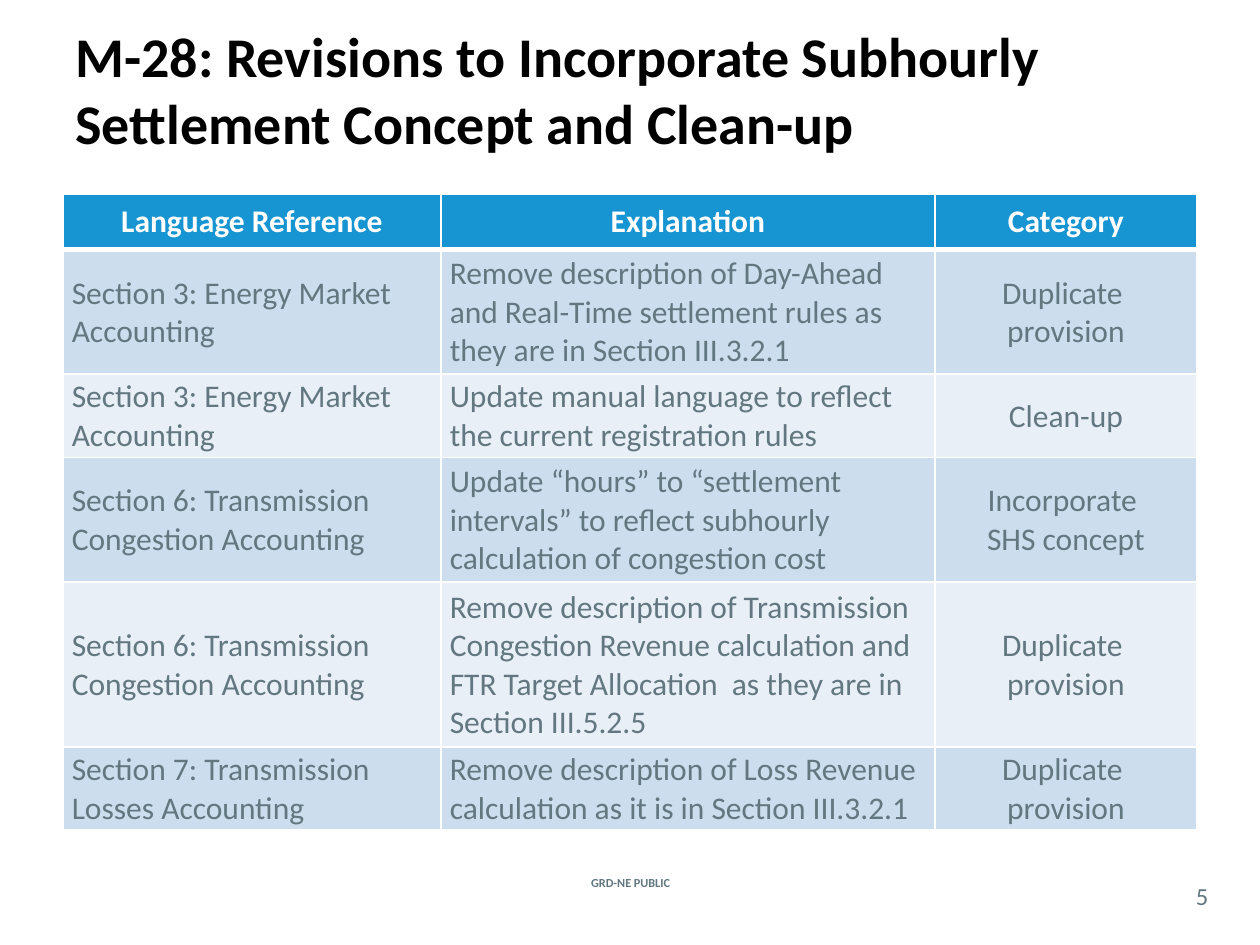
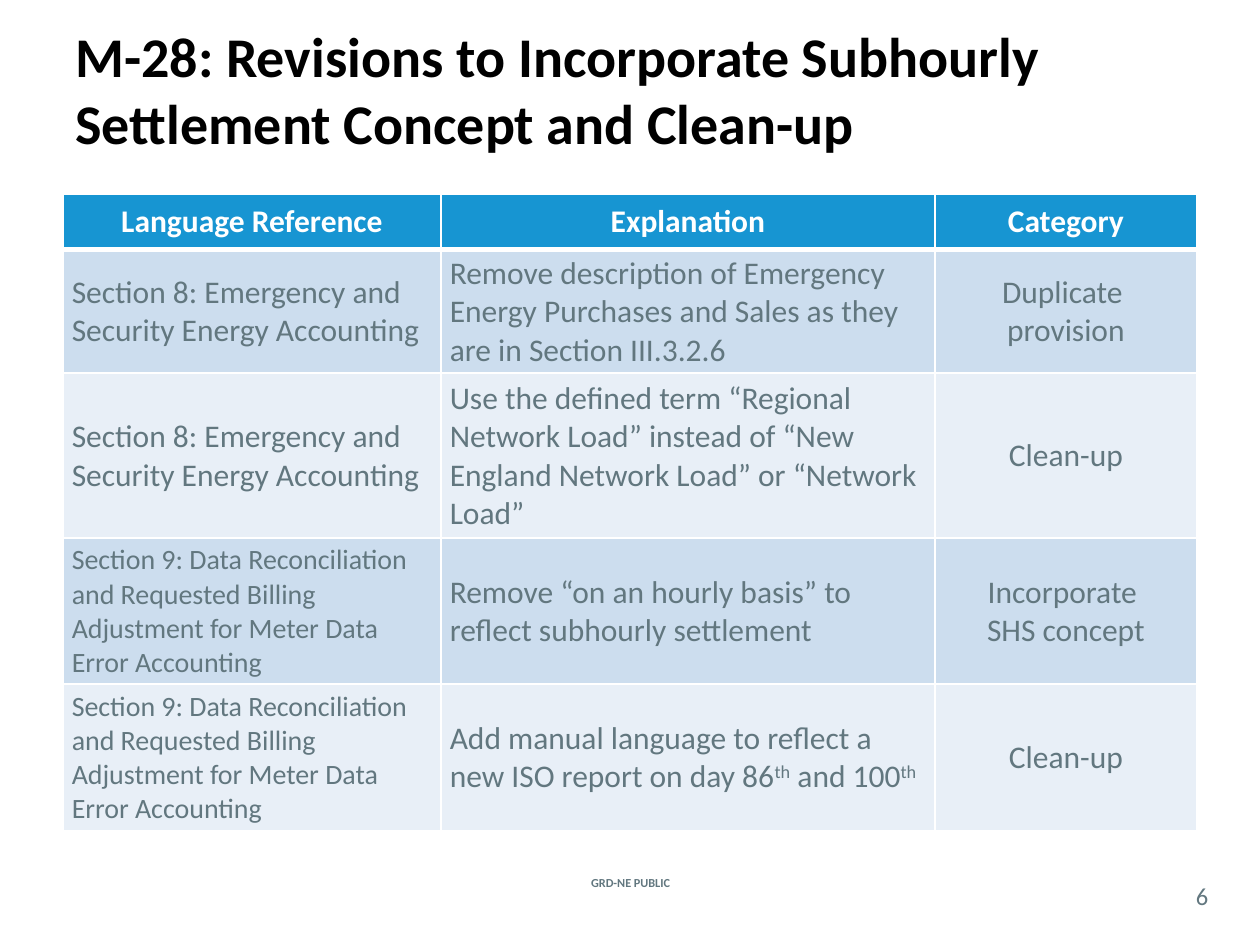
from dataclasses import dataclass

from lxml.etree import SubElement
from pptx import Presentation
from pptx.dml.color import RGBColor as Rgb
from pptx.enum.text import MSO_ANCHOR as Anchor, PP_ALIGN as Align
from pptx.oxml.ns import qn
from pptx.util import Pt

EMU_PER_PX = 9144  # 100 px to the inch


def px(length: int) -> int:
    return length * EMU_PER_PX


@dataclass(frozen=True)
class Theme:
    font: str = "Calibri"
    white: str = "FFFFFF"
    black: str = "000000"
    slate: str = "62777F"
    header_blue: str = "1795D2"
    bands: tuple[str, str] = ("CCDDEE", "E8EFF7")
    title_size: int = 32
    body_size: int = 18
    small_size: int = 16
    number_size: int = 14
    footer_size: int = 7
    rule: int = 1
    header_rule: int = 3


THEME = Theme()


@dataclass(frozen=True)
class TextStyle:
    size: int
    color: str = THEME.slate
    bold: bool = False
    align: Align = Align.LEFT
    indent: int = 0


@dataclass(frozen=True)
class Box:
    left: int
    top: int
    width: int
    height: int


@dataclass(frozen=True)
class Revision:
    reference: str
    explanation: str
    category: str
    height: int
    reference_size: int = THEME.body_size


@dataclass(frozen=True)
class RevisionPage:
    number: int
    revisions: tuple[Revision, ...]


TITLE = "M-28: Revisions to Incorporate Subhourly Settlement Concept and Clean-up"
FOOTER = "GRD-NE PUBLIC"
HEADINGS = ("Language Reference", "Explanation", "Category")

TITLE_BOX = Box(50, 8, 900, 125)
FOOTER_BOX = Box(427, 692, 147, 17)
NUMBER_BOX = Box(933, 696, 42, 29)
TABLE_BOX = Box(50, 154, 900, 505)
COLUMN_WIDTHS = (300, 392, 208)
HEADER_HEIGHT = 44

TITLE_STYLE = TextStyle(THEME.title_size, THEME.black, bold=True)
FOOTER_STYLE = TextStyle(THEME.footer_size, bold=True, align=Align.CENTER)
NUMBER_STYLE = TextStyle(THEME.number_size, align=Align.CENTER)
HEADING_STYLE = TextStyle(THEME.body_size, THEME.white, True, Align.CENTER)
EXPLANATION_STYLE = TextStyle(THEME.body_size, indent=6)
CATEGORY_STYLE = TextStyle(THEME.body_size, align=Align.CENTER)

ENERGY = "Section 3: Energy Market Accounting"
CONGESTION = "Section 6: Transmission Congestion Accounting"
LOSSES = "Section 7: Transmission Losses Accounting"
EMERGENCY = "Section 8: Emergency and Security Energy Accounting"
RECONCILIATION = (
    "Section 9: Data Reconciliation and Requested Billing "
    "Adjustment for Meter Data Error Accounting"
)
DUPLICATE = "Duplicate \nprovision"
SUBHOURLY = "Incorporate \nSHS concept"
CLEAN_UP = "Clean-up"

PAGES = (
    RevisionPage(5, (
        Revision(
            ENERGY,
            "Remove description of Day-Ahead and Real-Time settlement rules "
            "as they are in Section III.3.2.1",
            DUPLICATE, 99),
        Revision(
            ENERGY,
            "Update manual language to reflect the current registration rules",
            CLEAN_UP, 66),
        Revision(
            CONGESTION,
            "Update “hours” to “settlement intervals” to reflect subhourly "
            "calculation of congestion cost",
            SUBHOURLY, 99),
        Revision(
            CONGESTION,
            "Remove description of Transmission Congestion Revenue calculation "
            "and FTR Target Allocation  as they are in Section III.5.2.5",
            DUPLICATE, 131),
        Revision(
            LOSSES,
            "Remove description of Loss Revenue calculation as it is in "
            "Section III.3.2.1",
            DUPLICATE, 66),
    )),
    RevisionPage(6, (
        Revision(
            EMERGENCY,
            "Remove description of Emergency Energy Purchases and Sales as "
            "they are in Section III.3.2.6",
            DUPLICATE, 98),
        Revision(
            EMERGENCY,
            "Use the defined term “Regional Network Load” instead of “New "
            "England Network Load” or “Network Load”",
            CLEAN_UP, 131),
        Revision(
            RECONCILIATION,
            "Remove “on an hourly basis” to reflect subhourly settlement",
            SUBHOURLY, 116, THEME.small_size),
        Revision(
            RECONCILIATION,
            "Add manual language to reflect a new ISO report on day "
            "86^th^ and 100^th^",
            CLEAN_UP, 116, THEME.small_size),
    )),
)


def write(frame, text: str, style: TextStyle) -> None:
    """Write one paragraph per line; text between ^ marks is superscript."""
    for index, line in enumerate(text.split("\n")):
        paragraph = frame.add_paragraph() if index else frame.paragraphs[0]
        paragraph.alignment = style.align
        if style.indent:
            properties = paragraph._p.get_or_add_pPr()
            properties.set("marL", str(px(style.indent)))
            properties.set("indent", "0")
        font = paragraph.font
        font.name = THEME.font
        font.size = Pt(style.size)
        font.bold = style.bold
        font.color.rgb = Rgb.from_string(style.color)
        for part, words in enumerate(line.split("^")):
            if words:
                run = paragraph.add_run()
                run.text = words
                if part % 2:
                    run._r.get_or_add_rPr().set("baseline", "30000")


def add_text(slide, box: Box, text: str, style: TextStyle, inset: bool = True) -> None:
    frame = slide.shapes.add_textbox(
        px(box.left), px(box.top), px(box.width), px(box.height)).text_frame
    frame.word_wrap = True
    frame.vertical_anchor = Anchor.MIDDLE
    if not inset:
        frame.margin_left = frame.margin_top = 0
        frame.margin_right = frame.margin_bottom = 0
    write(frame, text, style)


def add_borders(cell, top: int, bottom: int) -> None:
    """Draw white cell borders; must run before the cell is filled."""
    widths = {"L": THEME.rule, "R": THEME.rule, "T": top, "B": bottom}
    for side, width in widths.items():
        line = SubElement(cell._tc.get_or_add_tcPr(), qn(f"a:ln{side}"), w=str(Pt(width)))
        fill = SubElement(line, qn("a:solidFill"))
        SubElement(fill, qn("a:srgbClr"), val=THEME.white)


def fill_cell(cell, text: str, style: TextStyle, color: str) -> None:
    cell.vertical_anchor = Anchor.MIDDLE
    cell.fill.solid()
    cell.fill.fore_color.rgb = Rgb.from_string(color)
    write(cell.text_frame, text, style)


def add_revision_table(slide, revisions: tuple[Revision, ...]) -> None:
    box = TABLE_BOX
    table = slide.shapes.add_table(
        len(revisions) + 1, len(HEADINGS),
        px(box.left), px(box.top), px(box.width), px(box.height)).table
    for column, width in zip(table.columns, COLUMN_WIDTHS):
        column.width = px(width)
    heights = [HEADER_HEIGHT, *(revision.height for revision in revisions)]
    for row, height in zip(table.rows, heights):
        row.height = px(height)

    for column, heading in enumerate(HEADINGS):
        cell = table.cell(0, column)
        add_borders(cell, THEME.rule, THEME.header_rule)
        fill_cell(cell, heading, HEADING_STYLE, THEME.header_blue)

    for row, revision in enumerate(revisions, start=1):
        entries = (
            (revision.reference, TextStyle(revision.reference_size, indent=6)),
            (revision.explanation, EXPLANATION_STYLE),
            (revision.category, CATEGORY_STYLE),
        )
        for column, (text, style) in enumerate(entries):
            cell = table.cell(row, column)
            cell.margin_left = cell.margin_top = cell.margin_right = px(1)
            cell.margin_bottom = 0
            add_borders(cell, THEME.header_rule if row == 1 else THEME.rule, THEME.rule)
            fill_cell(cell, text, style, THEME.bands[(row - 1) % 2])


def add_page(deck, page: RevisionPage) -> None:
    slide = deck.slides.add_slide(deck.slide_layouts[6])
    slide.background.fill.solid()
    slide.background.fill.fore_color.rgb = Rgb.from_string(THEME.white)
    add_text(slide, FOOTER_BOX, FOOTER, FOOTER_STYLE)
    add_revision_table(slide, page.revisions)
    add_text(slide, NUMBER_BOX, str(page.number), NUMBER_STYLE, inset=False)
    add_text(slide, TITLE_BOX, TITLE, TITLE_STYLE)


def main() -> None:
    deck = Presentation()
    deck.slide_width, deck.slide_height = px(1000), px(750)
    for page in PAGES:
        add_page(deck, page)
    deck.save("out.pptx")


if __name__ == "__main__":
    main()
